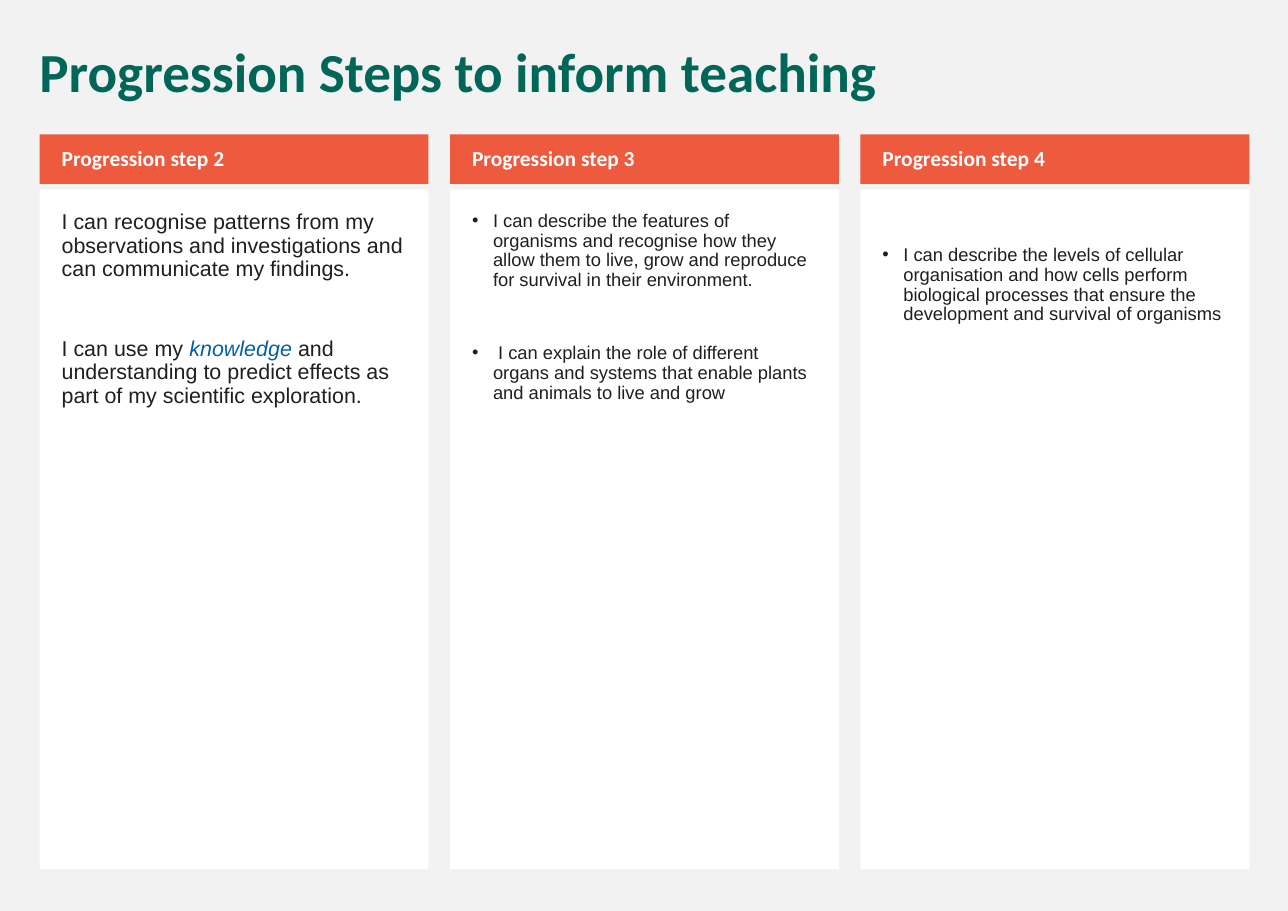
import pptx
import pptx.dml.color
import pptx.enum.shapes
import pptx.enum.text
import pptx.util
from lxml import etree
from pptx.util import Inches

COLORS = {
    "background": "F2F2F2",
    "title": "006758",
    "header": "ED5A3E",
    "white": "FFFFFF",
    "text": "1F1F1F",
    "link": "0360A6",
}

# Each paragraph is a list of (text, is_key_term) runs.
STEPS = [
    dict(heading="Progression step 2", size=14, gap=37.5, bullets=False, top=0.2, paragraphs=[
        [("I can recognise patterns from my observations and investigations "
          "and can communicate my findings.", False)],
        [("I can use my ", False), ("knowledge", True),
         (" and understanding to predict effects as part of my scientific exploration.", False)],
    ]),
    dict(heading="Progression step 3", size=12, gap=34.5, bullets=True, top=0.2, paragraphs=[
        [("I can describe the features of organisms and recognise how they allow them "
          "to live, grow and reproduce for survival in their environment.", False)],
        [(" I can explain the role of different organs and systems that enable plants "
          "and animals to live and grow", False)],
    ]),
    dict(heading="Progression step 4", size=12, gap=34.5, bullets=True, top=0.51, paragraphs=[
        [("I can describe the levels of cellular organisation and how cells perform "
          "biological processes that ensure the development and survival of organisms", False)],
    ]),
]


def rgb(name):
    return pptx.dml.color.RGBColor.from_string(COLORS[name])


def add_run(p, text, font, size, color, bold=False, italic=False):
    r = p.add_run()
    r.text = text
    r.font.name = font
    r.font.size = pptx.util.Pt(size)
    r.font.color.rgb = rgb(color)
    r.font.bold = bold
    r.font.italic = italic


def format_paragraph(p, space_before=11):
    p.alignment = pptx.enum.text.PP_ALIGN.LEFT
    p.line_spacing = 0.9
    p.space_before = pptx.util.Pt(space_before)


def add_bullet(p):
    pPr = p._p.get_or_add_pPr()
    pPr.set("marL", str(Inches(0.19)))
    pPr.set("indent", str(-Inches(0.19)))
    ns = pptx.oxml.ns.qn
    etree.SubElement(pPr, ns("a:buFont")).set("typeface", "Arial")
    etree.SubElement(pPr, ns("a:buChar")).set("char", "•")


def set_frame(tf, anchor, left, top, right, bottom):
    tf.word_wrap = True
    tf.vertical_anchor = anchor
    tf.margin_left, tf.margin_top = Inches(left), Inches(top)
    tf.margin_right, tf.margin_bottom = Inches(right), Inches(bottom)


def add_panel(s, x, y, w, h, fill):
    sp = s.shapes.add_shape(pptx.enum.shapes.MSO_SHAPE.RECTANGLE,
                            Inches(x), Inches(y), Inches(w), Inches(h))
    sp.shadow.inherit = False
    sp.fill.solid()
    sp.fill.fore_color.rgb = rgb(fill)
    sp.line.fill.background()
    return sp.text_frame


def add_title(s, x, y, w, h):
    tf = s.shapes.add_textbox(Inches(x), Inches(y), Inches(w), Inches(h)).text_frame
    set_frame(tf, pptx.enum.text.MSO_ANCHOR.TOP, 0.1, 0.05, 0.1, 0.05)
    p = tf.paragraphs[0]
    format_paragraph(p)
    add_run(p, "Progression Steps to inform teaching", "Calibri", 36, "title", bold=True)


def add_step(s, step, x, y, w, h):
    """Add one column: a coloured heading above a white text panel."""
    header_h, body_offset = 0.45, 0.5
    tf = add_panel(s, x, y + body_offset, w, h - body_offset, "white")
    set_frame(tf, pptx.enum.text.MSO_ANCHOR.TOP, 0.2, step["top"], 0.2, 0.2)
    for i, runs in enumerate(step["paragraphs"]):
        p = tf.add_paragraph() if i else tf.paragraphs[0]
        format_paragraph(p, step["gap"] if i else 11)
        if step["bullets"]:
            add_bullet(p)
        for text, key_term in runs:
            add_run(p, text, "Arial", step["size"],
                    "link" if key_term else "text", italic=key_term)

    tf = add_panel(s, x, y, w, header_h, "header")
    set_frame(tf, pptx.enum.text.MSO_ANCHOR.MIDDLE, 0.2, 0.05, 0.1, 0.05)
    p = tf.paragraphs[0]
    format_paragraph(p)
    add_run(p, step["heading"], "Calibri", 14, "white", bold=True)


def add_steps(s, x, y, w, h):
    column_w = 3.53
    pitch = (w - column_w) / (len(STEPS) - 1)
    for i, step in enumerate(STEPS):
        add_step(s, step, x + i * pitch, y, column_w, h)


def main():
    prs = pptx.Presentation()
    prs.slide_width, prs.slide_height = Inches(11.69), Inches(8.27)
    s = prs.slides.add_slide(prs.slide_layouts[6])
    s.background.fill.solid()
    s.background.fill.fore_color.rgb = rgb("background")
    add_steps(s, 0.36, 1.22, 10.98, 6.67)
    add_title(s, 0.26, 0.36, 11.08, 0.65)
    prs.save("out.pptx")


if __name__ == "__main__":
    main()
